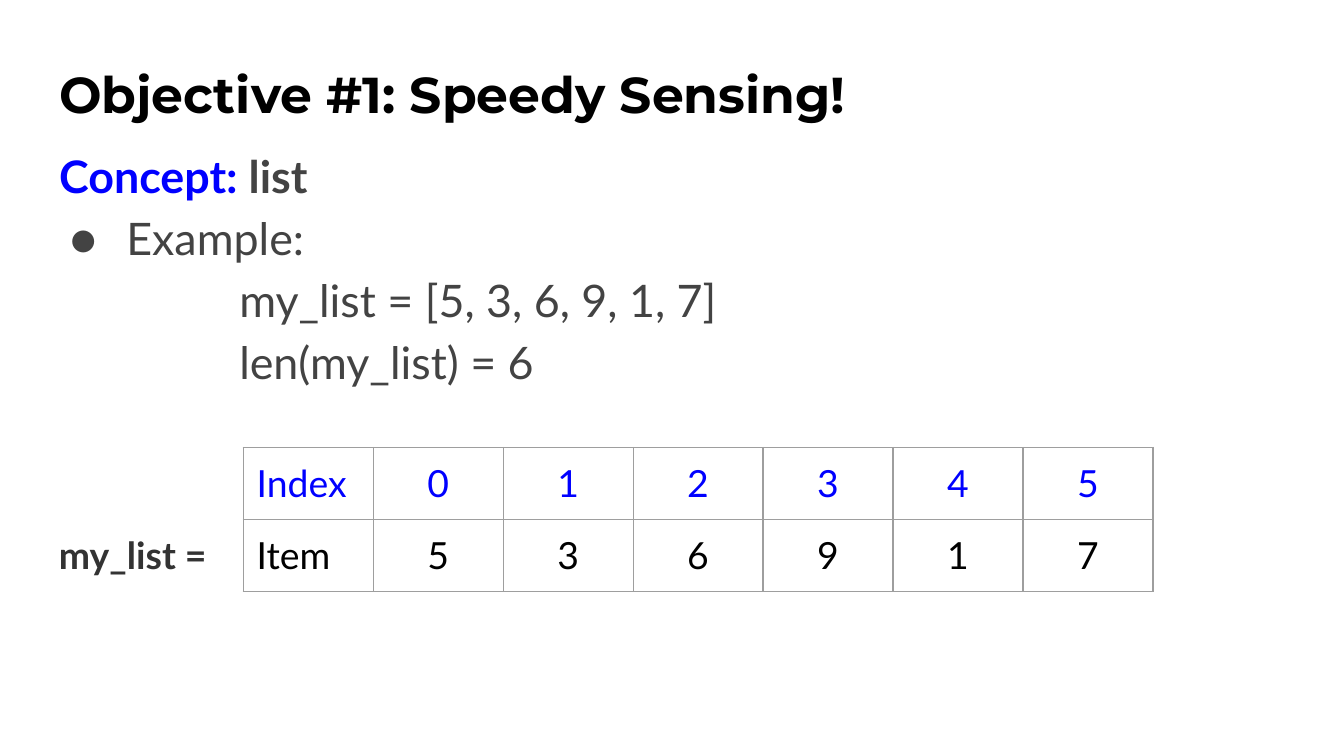
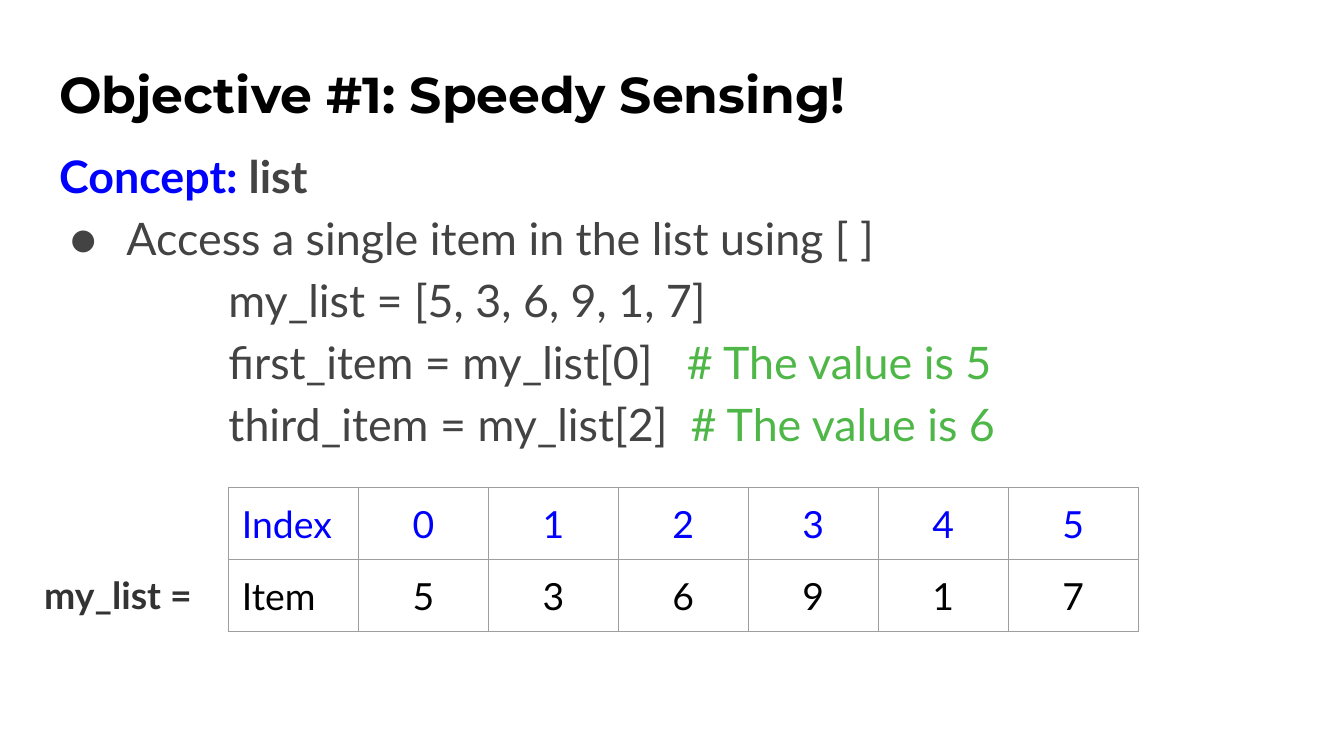
import pptx
import pptx.dml.color
import pptx.enum.text
import pptx.oxml.ns
import pptx.util
from lxml import etree

Inches = pptx.util.Inches
Pt = pptx.util.Pt
RGBColor = pptx.dml.color.RGBColor
Align = pptx.enum.text.PP_ALIGN
qn = pptx.oxml.ns.qn

BLACK = RGBColor(0x00, 0x00, 0x00)
BLUE = RGBColor(0x00, 0x00, 0xFF)
BODY_GREY = RGBColor(0x43, 0x43, 0x43)
LABEL_GREY = RGBColor(0x33, 0x33, 0x33)
GREEN = RGBColor(0x4E, 0xB7, 0x48)
BORDER_GREY = RGBColor(0x9E, 0x9E, 0x9E)

SLIDE_WIDTH = 10
SLIDE_HEIGHT = SLIDE_WIDTH * 9 / 16
HEADING = "Objective #1: Speedy Sensing!"
ITEMS = [5, 3, 6, 9, 1, 7]
LIST_CODE = ("my_list = [5, 3, 6, 9, 1, 7]", "")
TABLE_WIDTH = 6.77
ROW_HEIGHT = 0.53

SLIDES = [
    {
        "point": "Example:",
        "code": [LIST_CODE, ("len(my_list) = 6", "")],
        "code_indent": 1.34,
        "table_at": (1.81, 3.33),
    },
    {
        "point": "Access a single item in the list using [ ]",
        "code": [
            LIST_CODE,
            ("first_item = my_list[0]   ", "# The value is 5"),
            ("third_item = my_list[2]  ", "# The value is 6"),
        ],
        "code_indent": 1.26,
        "table_at": (1.7, 3.63),
    },
]


def style(run, size, color, bold=False, face="Lato"):
    """Set the font of one run."""
    run.font.name = face
    run.font.size = Pt(size)
    run.font.bold = bold
    run.font.color.rgb = color


def add_run(paragraph, text, color, bold=False):
    """Append a body run to a paragraph."""
    run = paragraph.add_run()
    run.text = text
    style(run, 24, color, bold)


def prepare_frame(shape, box):
    """Place a text shape in its box and set its insets and wrapping."""
    shape.left, shape.top, shape.width, shape.height = map(Inches, box)
    frame = shape.text_frame
    frame.margin_left = frame.margin_right = Inches(0.1)
    frame.margin_top = frame.margin_bottom = Inches(0.1)
    frame.word_wrap = True
    frame.auto_size = pptx.enum.text.MSO_AUTO_SIZE.NONE
    frame.vertical_anchor = pptx.enum.text.MSO_ANCHOR.TOP
    return frame


def format_line(paragraph, left=0, hanging=0):
    """Set indent and spacing of a body paragraph, with a bullet if it hangs."""
    properties = paragraph._p.get_or_add_pPr()
    properties.set("marL", str(Inches(left)))
    properties.set("indent", str(Inches(-hanging)))
    if hanging:
        bullet_color = etree.SubElement(properties, qn("a:buClr"))
        etree.SubElement(bullet_color, qn("a:srgbClr"), val=str(BODY_GREY))
        etree.SubElement(properties, qn("a:buFont"), typeface="Lato")
        etree.SubElement(properties, qn("a:buChar"), char="●")
    else:
        etree.SubElement(properties, qn("a:buNone"))
    paragraph.alignment = Align.LEFT
    paragraph.line_spacing = 1.15
    paragraph.space_before = paragraph.space_after = Pt(0)


def fill_title(title, box):
    """Write the shared heading into the title placeholder."""
    frame = prepare_frame(title, box)
    frame.text = HEADING
    frame.paragraphs[0].alignment = Align.LEFT
    style(frame.paragraphs[0].runs[0], 27, BLACK, True, "Montserrat")


def fill_concept(body, box, point, code, code_indent):
    """Write the concept line, its bullet and the code lines."""
    frame = prepare_frame(body, box)
    concept = frame.paragraphs[0]
    format_line(concept)
    add_run(concept, "Concept:", BLUE, True)
    add_run(concept, " list", BODY_GREY, True)
    example = frame.add_paragraph()
    format_line(example, left=0.5, hanging=0.42)
    add_run(example, point, BODY_GREY)
    for statement, comment in code:
        line = frame.add_paragraph()
        format_line(line, left=code_indent)
        add_run(line, statement, BODY_GREY)
        if comment:
            add_run(line, comment, GREEN)


def border_cell(cell):
    """Draw a thin grey line on each side of a cell."""
    properties = cell._tc.get_or_add_tcPr()
    for side in ("a:lnL", "a:lnR", "a:lnT", "a:lnB"):
        line = etree.SubElement(properties, qn(side), w=str(Pt(0.75)))
        solid = etree.SubElement(line, qn("a:solidFill"))
        etree.SubElement(solid, qn("a:srgbClr"), val=str(BORDER_GREY))


def add_index_table(slide, left, top):
    """Add the table of indexes and items with its list name."""
    rows = [(["Index", *range(len(ITEMS))], BLUE), (["Item", *ITEMS], BLACK)]
    columns = len(ITEMS) + 1
    table = slide.shapes.add_table(
        len(rows), columns, Inches(left), Inches(top),
        Inches(TABLE_WIDTH), Inches(ROW_HEIGHT * len(rows)),
    ).table
    table.first_row = table.horz_banding = False
    for row, (values, color) in enumerate(rows):
        for column, value in enumerate(values):
            cell = table.cell(row, column)
            border_cell(cell)
            cell.fill.background()
            cell.margin_left = cell.margin_right = Inches(0.1)
            cell.margin_top = cell.margin_bottom = Inches(0.1)
            cell.text_frame.text = str(value)
            paragraph = cell.text_frame.paragraphs[0]
            paragraph.alignment = Align.CENTER if column else Align.LEFT
            style(paragraph.runs[0], 20, color)
    box = (left - 1.47, top + ROW_HEIGHT, 1.37, 0.68)
    list_name = slide.shapes.add_textbox(*map(Inches, box))
    frame = prepare_frame(list_name, box)
    frame.text = "my_list ="
    style(frame.paragraphs[0].runs[0], 20, LABEL_GREY, True)


def add_concept_slide(deck, point, code, code_indent, table_at):
    """Add one slide that explains the list concept."""
    slide = deck.slides.add_slide(deck.slide_layouts[1])
    fill_title(slide.shapes.title, (0.34, 0.37, 9.32, 0.68))
    fill_concept(slide.placeholders[1], (0.34, 0.95, 9.22, 4.26), point, code, code_indent)
    add_index_table(slide, *table_at)


def main():
    """Build and save the deck."""
    deck = pptx.Presentation()
    deck.slide_width = Inches(SLIDE_WIDTH)
    deck.slide_height = Inches(SLIDE_HEIGHT)
    for content in SLIDES:
        add_concept_slide(deck, **content)
    deck.save("out.pptx")


if __name__ == "__main__":
    main()
